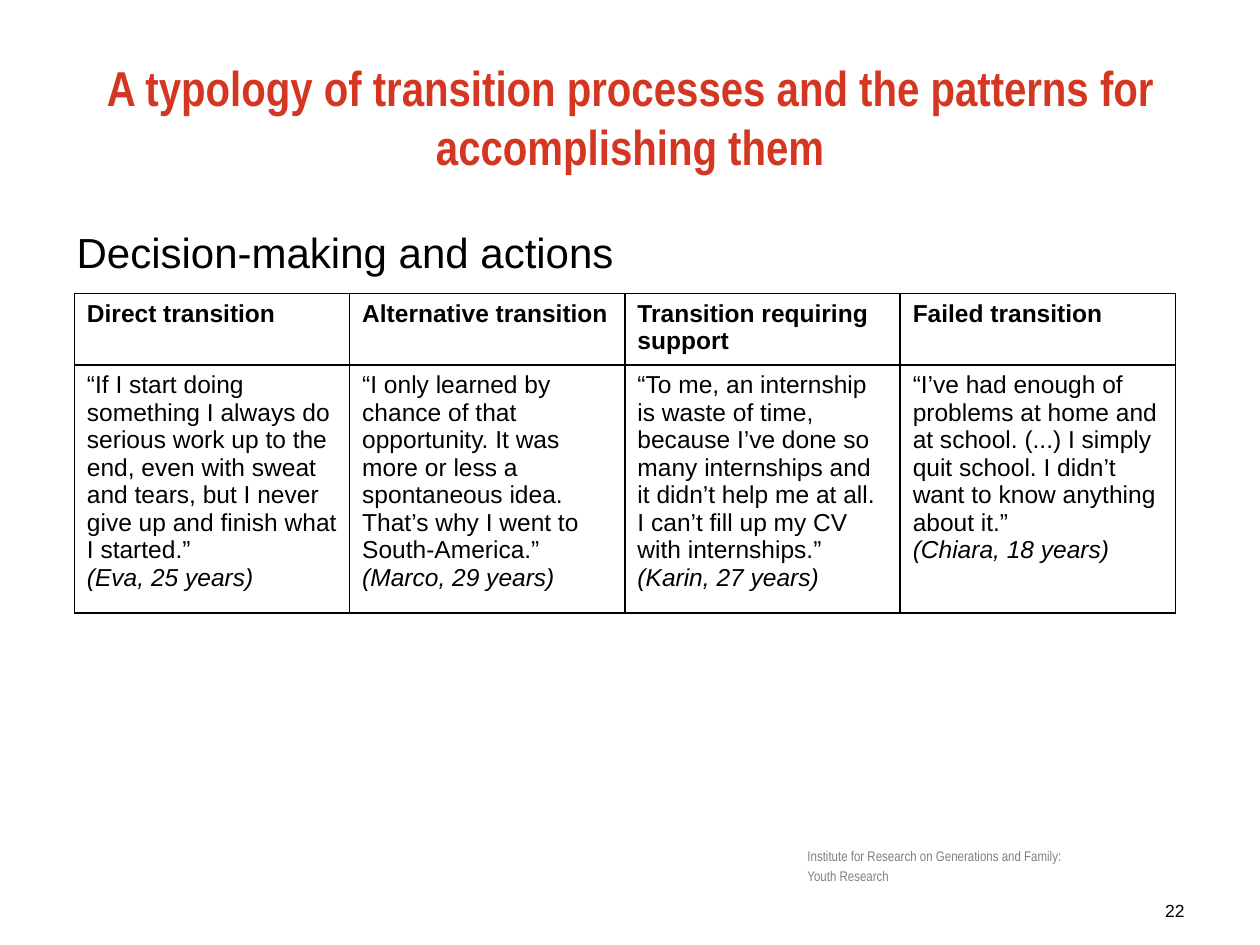
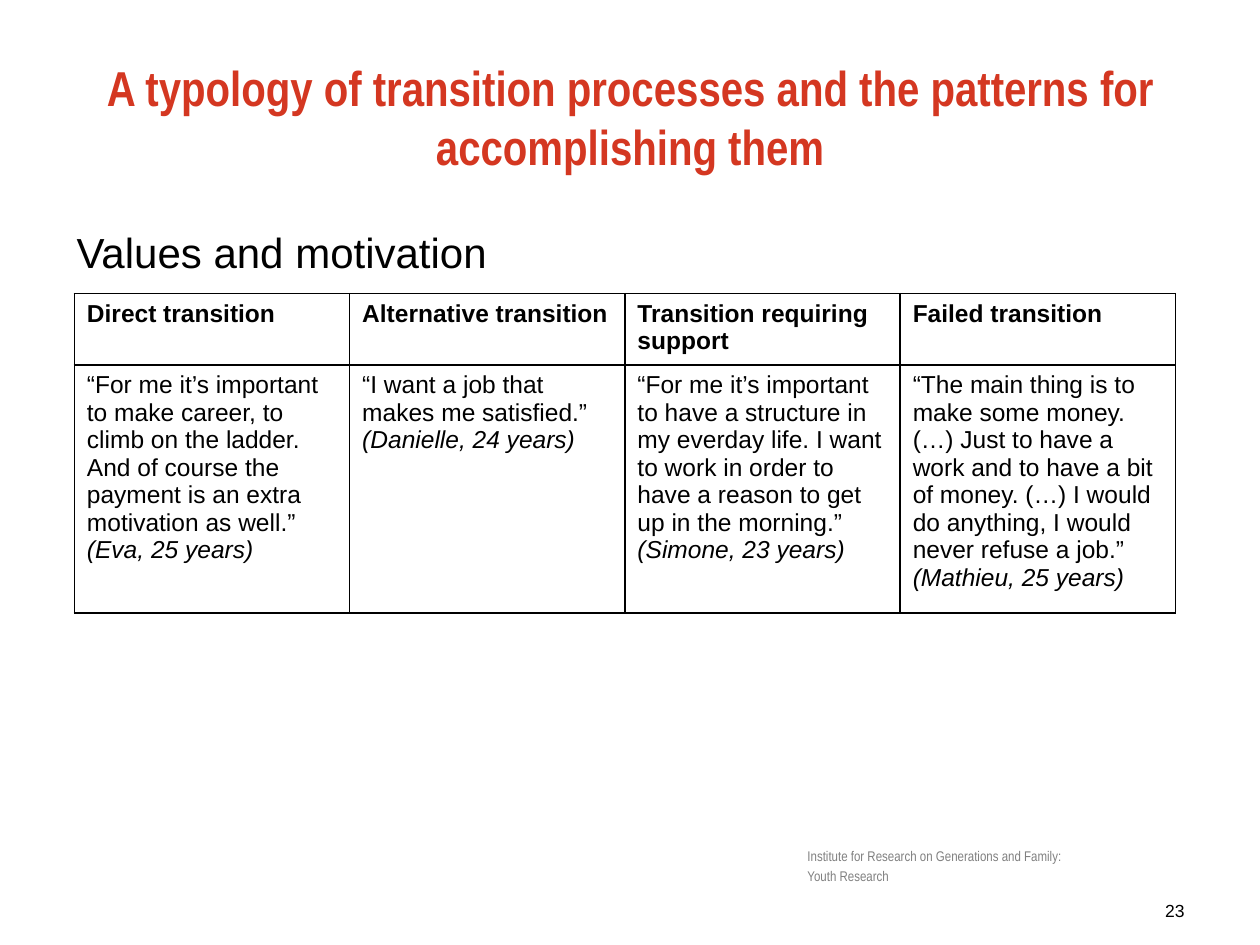
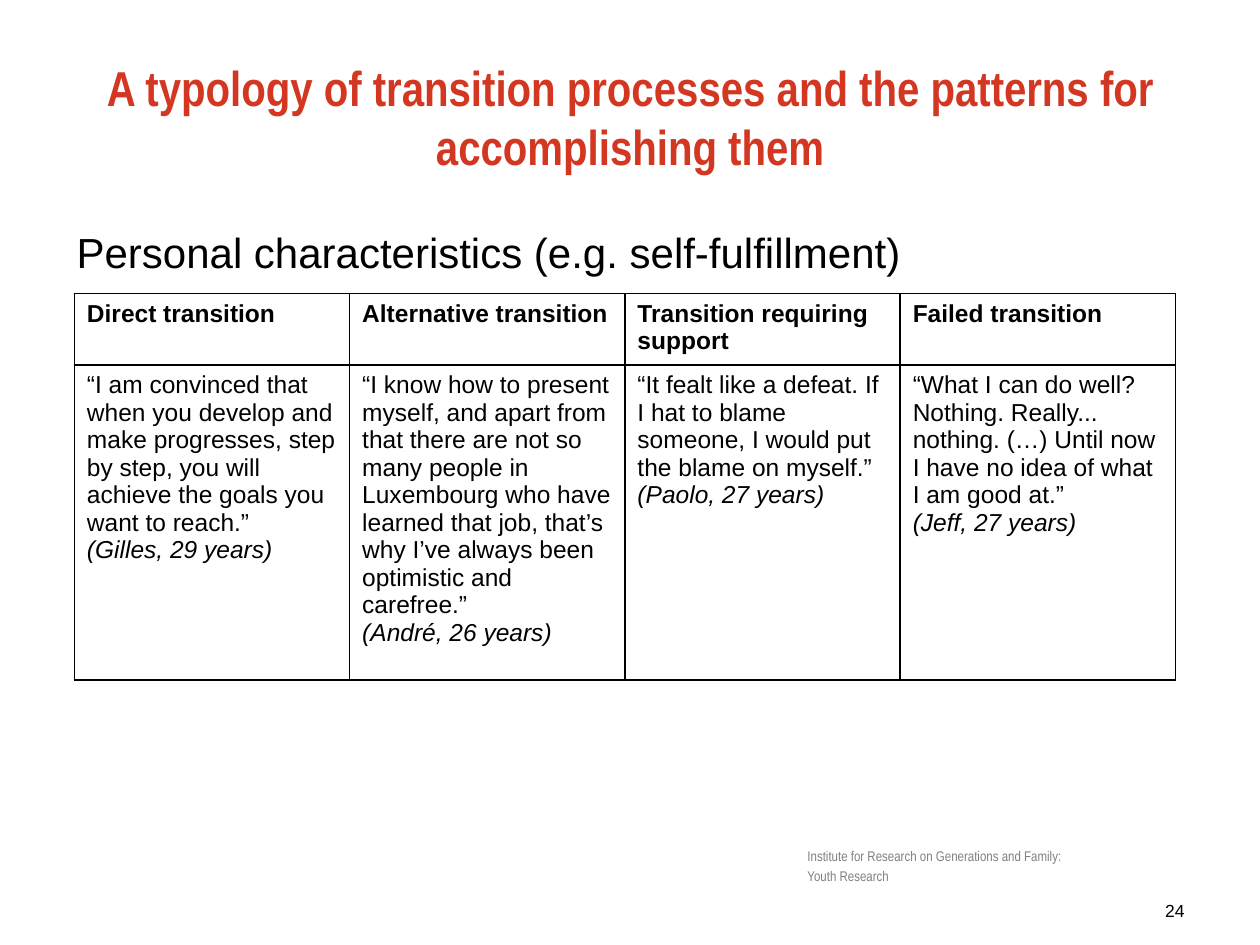
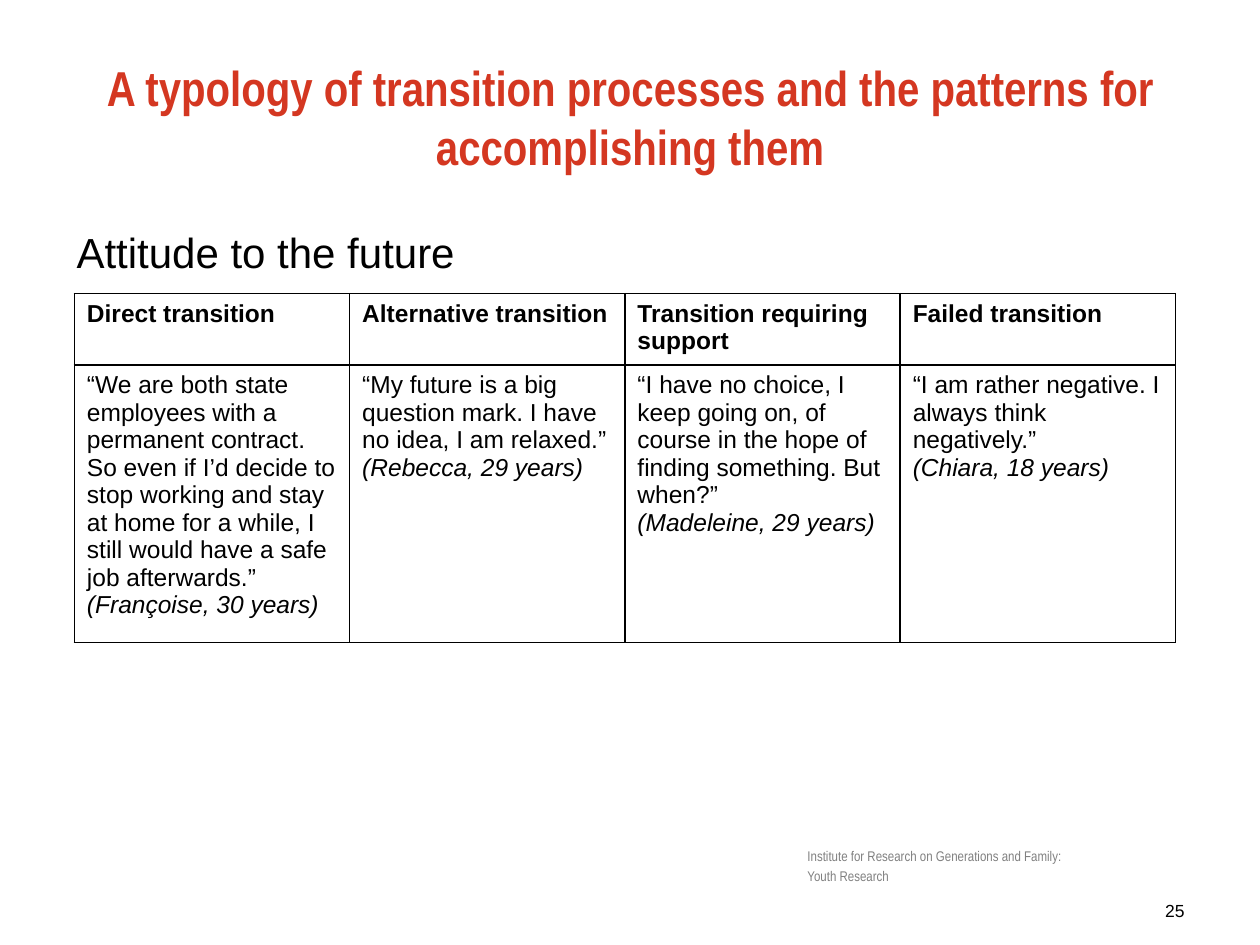
from lxml import etree
from pptx import Presentation
from pptx.dml.color import RGBColor
from pptx.enum.text import MSO_ANCHOR as Anchor, MSO_AUTO_SIZE as AutoSize, PP_ALIGN as Align
from pptx.oxml.ns import qn
from pptx.util import Inches, Pt

TITLE = "A typology of transition processes and the patterns for accomplishing them"
FOOTER = ["Institute for Research on Generations and Family:", "Youth Research"]
HEADINGS = ["Direct transition", "Alternative transition",
            "Transition requiring support", "Failed transition"]
FIRST_NUMBER = 22
HEADING_HEIGHT = 0.53

# Topic, height of the quotes row, and one (quote, speaker) per heading
PAGES = [
    ("Decision-making and actions", 1.85, [
        ("“If I start doing something I always do serious work up to the end, even with "
         "sweat and tears, but I never give up and finish what I started.”",
         "(Eva, 25 years)"),
        ("“I only learned by chance of that opportunity. It was more or less a spontaneous "
         "idea. That’s why I went to South-America.”",
         "(Marco, 29 years)"),
        ("“To me, an internship is waste of time, because I’ve done so many internships "
         "and it didn’t help me at all. I can’t fill up my CV with internships.”",
         "(Karin, 27 years)"),
        ("“I’ve had enough of problems at home and at school. (...) I simply quit school. "
         "I didn’t want to know anything about it.”",
         "(Chiara, 18 years)"),
    ]),
    ("Values and motivation", 1.85, [
        ("“For me it’s important to make career, to climb on the ladder. And of course "
         "the payment is an extra motivation as well.”",
         "(Eva, 25 years)"),
        ("“I want a job that makes me satisfied.”",
         "(Danielle, 24 years)"),
        ("“For me it’s important to have a structure in my everday life. I want to work "
         "in order to have a reason to get up in the morning.”",
         "(Simone, 23 years)"),
        ("“The main thing is to make some money. (…) Just to have a work and to have a bit "
         "of money. (…) I would do anything, I would never refuse a job.”",
         "(Mathieu, 25 years)"),
    ]),
    ("Personal characteristics (e.g. self-fulfillment)", 2.5, [
        ("“I am convinced that when you develop and make progresses, step by step, you "
         "will achieve the goals you want to reach.”",
         "(Gilles, 29 years)"),
        ("“I know how to present myself, and apart from that there are not so many people "
         "in Luxembourg who have learned that job, that’s why I’ve always been optimistic "
         "and carefree.”",
         "(André, 26 years)"),
        ("“It fealt like a defeat. If I hat to blame someone, I would put the blame on "
         "myself.”",
         "(Paolo, 27 years)"),
        ("“What I can do well? Nothing. Really... nothing. (…) Until now I have no idea "
         "of what I am good at.”",
         "(Jeff, 27 years)"),
    ]),
    ("Attitude to the future", 2.07, [
        ("“We are both state employees with a permanent contract. So even if I’d decide to "
         "stop working and stay at home for a while, I still would have a safe job "
         "afterwards.”",
         "(Françoise, 30 years)"),
        ("“My future is a big question mark. I have no idea, I am relaxed.”",
         "(Rebecca, 29 years)"),
        ("“I have no choice, I keep going on, of course in the hope of finding something. "
         "But when?”",
         "(Madeleine, 29 years)"),
        ("“I am rather negative. I always think negatively.”",
         "(Chiara, 18 years)"),
    ]),
]


def color(value):
    return RGBColor.from_string(value)


class Deck:
    BLACK = "000000"
    TITLE_FONT = dict(name="Arial Narrow", size=Pt(28), bold=True, color="D43721")
    TOPIC_FONT = dict(name="Arial", size=Pt(24), color=BLACK)
    FOOTER_FONT = dict(name="Arial Narrow", size=Pt(8), color="808080")
    NUMBER_FONT = dict(name="Arial", size=Pt(10), color=BLACK)
    CELL_FONT = dict(name="Arial", size=Pt(14), bold=False, color=BLACK)

    def __init__(self):
        self.deck = Presentation()
        self.deck.slide_width, self.deck.slide_height = Inches(10), Inches(7.5)
        self.page = None

    def add_page(self):
        self.page = self.deck.slides.add_slide(self.deck.slide_layouts[5])

    def fill_text(self, frame, lines, **para_format):
        """Fill a text frame with one paragraph per (text, font) pair."""
        frame.word_wrap = True
        for index, (text, font) in enumerate(lines):
            para = frame.add_paragraph() if index else frame.paragraphs[0]
            for key, value in para_format.items():
                setattr(para, key, value)
            span = para.add_run()
            span.text = text
            for key, value in font.items():
                if key == "color":
                    span.font.color.rgb = color(value)
                else:
                    setattr(span.font, key, value)

    def title(self, text):
        box = self.page.shapes.title
        box.left, box.top = Inches(0.5), Inches(0.3)
        box.width, box.height = Inches(9), Inches(1.25)
        box.text_frame.auto_size = AutoSize.NONE
        box.text_frame.vertical_anchor = Anchor.MIDDLE
        self.fill_text(box.text_frame, [(text, self.TITLE_FONT)], alignment=Align.CENTER)

    def text(self, left, top, width, height, lines, **para_format):
        box = self.page.shapes.add_textbox(
            Inches(left), Inches(top), Inches(width), Inches(height))
        self.fill_text(box.text_frame, lines, **para_format)

    def border(self, cell):
        properties = cell._tc.get_or_add_tcPr()
        for side in ("a:lnL", "a:lnR", "a:lnT", "a:lnB"):
            line = etree.SubElement(properties, qn(side), w=str(Pt(1)))
            fill = etree.SubElement(line, qn("a:solidFill"))
            etree.SubElement(fill, qn("a:srgbClr"), val=self.BLACK)

    def table(self, left, top, width, heights, rows):
        """Draw a plain grid; each cell is a list of (text, font) pairs."""
        table = self.page.shapes.add_table(
            len(rows), len(rows[0]), Inches(left), Inches(top),
            Inches(width), Inches(sum(heights))).table
        table.first_row = table.horz_banding = False
        for row, height, cells in zip(table.rows, heights, rows):
            row.height = Inches(height)
            for cell, lines in zip(row.cells, cells):
                self.border(cell)
                cell.fill.background()
                self.fill_text(cell.text_frame, lines)

    def footer(self, number):
        self.text(6.31, 6.66, 2.62, 0.51,
                  [(line, self.FOOTER_FONT) for line in FOOTER], line_spacing=1.15)
        self.text(7.17, 7.09, 2.33, 0.33,
                  [(str(number), self.NUMBER_FONT)], alignment=Align.RIGHT)


def main():
    deck = Deck()
    plain = deck.CELL_FONT
    bold, italic = {**plain, "bold": True}, {**plain, "italic": True}
    headings = [[(heading, bold)] for heading in HEADINGS]
    for number, (topic, quotes_height, quotes) in enumerate(PAGES, FIRST_NUMBER):
        deck.add_page()
        deck.title(TITLE)
        deck.text(0.51, 1.75, 9.13, 4.95, [(topic, deck.TOPIC_FONT)])
        deck.footer(number)
        answers = [[(quote, plain), (speaker, italic)] for quote, speaker in quotes]
        deck.table(0.59, 2.33, 8.74, [HEADING_HEIGHT, quotes_height], [headings, answers])
    deck.deck.save("out.pptx")


if __name__ == "__main__":
    main()
